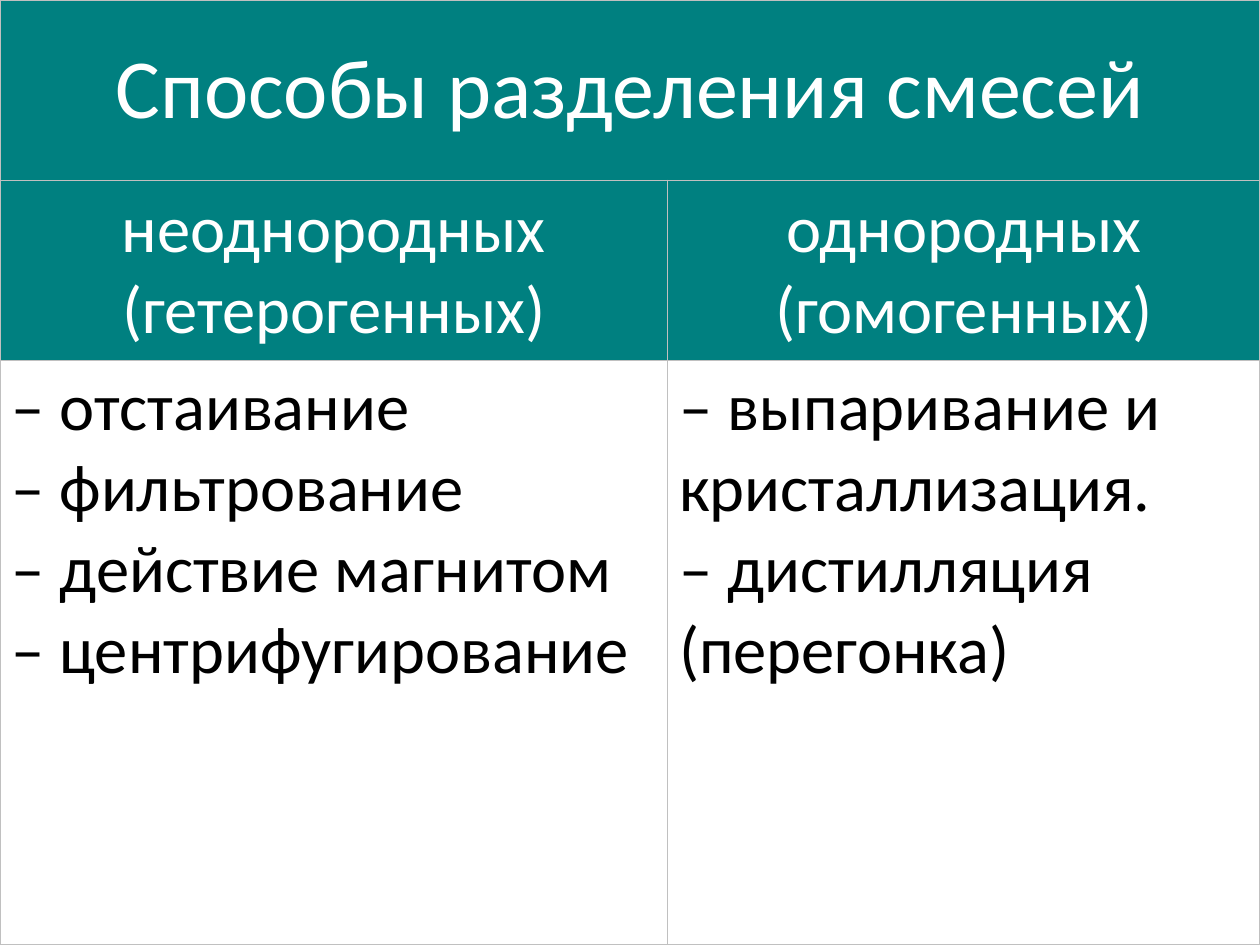
import pptx
import pptx.util
import pptx.dml.color
import pptx.enum.text
import pptx.oxml
from dataclasses import dataclass
from pptx.oxml.ns import nsdecls

Pt = pptx.util.Pt
Color = pptx.dml.color.RGBColor.from_string
Align = pptx.enum.text.PP_ALIGN
Anchor = pptx.enum.text.MSO_ANCHOR


@dataclass(frozen=True)
class Theme:
    font: str = "Calibri"
    header_fill: str = "008080"
    header_text: str = "FFFFFF"
    body_text: str = "000000"
    border: str = "C0C0C0"
    border_width: float = 0.75
    title_size: int = 48
    text_size: int = 38


THEME = Theme()
PAGE_WIDTH, PAGE_HEIGHT = 720, 540
COLUMN_SHARES = (0.53, 0.47)
HEADER_HEIGHT = 103

TITLE = "Способы разделения смесей"
MIXTURES = {
    "неоднородных (гетерогенных)": [
        "– отстаивание",
        "– фильтрование",
        "– действие магнитом",
        "– центрифугирование",
    ],
    "однородных (гомогенных)": [
        "– выпаривание и кристаллизация.",
        "– дистилляция (перегонка)",
    ],
}


def apply_format(target, values):
    for name, value in values.items():
        setattr(target, name, value)


def draw_borders(cell):
    properties = cell._tc.get_or_add_tcPr()
    for side in ("lnL", "lnR", "lnT", "lnB"):
        properties.append(pptx.oxml.parse_xml(
            f'<a:{side} {nsdecls("a")} w="{Pt(THEME.border_width)}">'
            f'<a:solidFill><a:srgbClr val="{THEME.border}"/></a:solidFill></a:{side}>'
        ))


def fill_cell(cell, lines, size, header):
    draw_borders(cell)
    apply_format(cell, {
        "margin_left": Pt(6.5), "margin_right": Pt(6.5),
        "margin_top": Pt(3.6), "margin_bottom": Pt(3.6),
        "vertical_anchor": Anchor.MIDDLE if header else Anchor.TOP,
    })
    if header:
        cell.fill.solid()
        cell.fill.fore_color.rgb = Color(THEME.header_fill)
    else:
        cell.fill.background()
    cell.text_frame.text = "\n".join(lines)
    for para in cell.text_frame.paragraphs:
        para.alignment = Align.CENTER if header else Align.LEFT
        for span in para.runs:
            apply_format(span.font, {"name": THEME.font, "size": Pt(size), "bold": False})
            span.font.color.rgb = Color(THEME.header_text if header else THEME.body_text)


def add_methods_table(page, left, top, width, height):
    frame = page.shapes.add_table(3, len(MIXTURES), Pt(left), Pt(top), Pt(width), Pt(height))
    table = frame.table
    apply_format(table, {"first_row": False, "horz_banding": False})
    for column, share in zip(table.columns, COLUMN_SHARES):
        column.width = Pt(width * share)
    for row, row_height in zip(table.rows, (HEADER_HEIGHT, HEADER_HEIGHT, height - 2 * HEADER_HEIGHT)):
        row.height = Pt(row_height)

    table.cell(0, 0).merge(table.cell(0, len(MIXTURES) - 1))
    fill_cell(table.cell(0, 0), [TITLE], THEME.title_size, header=True)
    draw_borders(table.cell(0, 1))
    for index, (mixture, methods) in enumerate(MIXTURES.items()):
        fill_cell(table.cell(1, index), [mixture], THEME.text_size, header=True)
        fill_cell(table.cell(2, index), methods, THEME.text_size, header=False)


def main():
    deck = pptx.Presentation()
    apply_format(deck, {"slide_width": Pt(PAGE_WIDTH), "slide_height": Pt(PAGE_HEIGHT)})
    page = deck.slides.add_slide(deck.slide_layouts[6])
    add_methods_table(page, 0, 0, PAGE_WIDTH, PAGE_HEIGHT)
    deck.save("out.pptx")


if __name__ == "__main__":
    main()
